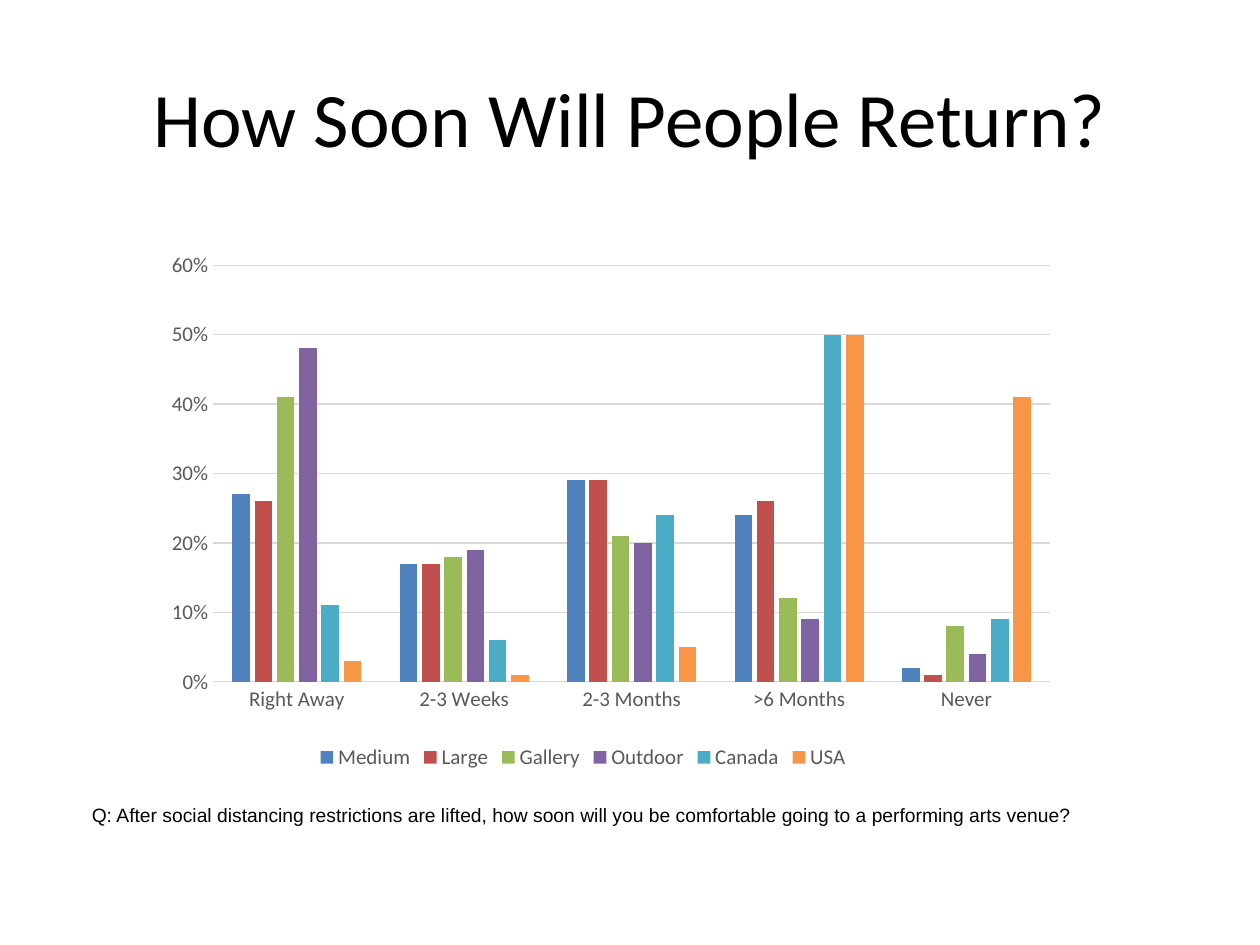
from dataclasses import dataclass

from lxml.etree import SubElement
from pptx import Presentation
from pptx.chart.data import CategoryChartData
from pptx.dml.color import RGBColor
from pptx.enum.chart import XL_CHART_TYPE as ChartType
from pptx.enum.chart import XL_LEGEND_POSITION as LegendPosition
from pptx.enum.chart import XL_TICK_MARK as TickMark
from pptx.enum.text import MSO_ANCHOR as Anchor
from pptx.enum.text import PP_ALIGN as Align
from pptx.oxml.ns import qn
from pptx.util import Inches, Pt

TITLE = "How Soon Will People Return?"
QUESTION = ("Q: After social distancing restrictions are lifted, how soon will you "
            "be comfortable going to a performing arts venue?")
TIMINGS = ["Right Away", "2-3 Weeks", "2-3 Months", ">6 Months", "Never"]
AUDIENCES = [
    ("Medium", "4F81BD", (0.27, 0.17, 0.29, 0.24, 0.02)),
    ("Large", "C0504D", (0.26, 0.17, 0.29, 0.26, 0.01)),
    ("Gallery", "9BBB59", (0.41, 0.18, 0.21, 0.12, 0.08)),
    ("Outdoor", "8064A2", (0.48, 0.19, 0.2, 0.09, 0.04)),
    ("Canada", "4BACC6", (0.11, 0.06, 0.24, 0.5, 0.09)),
    ("USA", "F79646", (0.03, 0.01, 0.05, 0.5, 0.41)),
]

SLIDE_SIZE = Inches(10), Inches(7.5)
TITLE_BOX = 0.05, 0.04, 0.9, 1 / 6
CHART_BOX = 0.092, 0.181, 0.742, 0.639
QUESTION_BOX = 0.063, 0.843, 0.845, 0.039
PLOT_SHARES = {"x": 0.104, "y": 0.156, "w": 0.896, "h": 0.69}


@dataclass(frozen=True)
class Theme:
    ink: str = "000000"
    label: str = "595959"
    rule: str = "D9D9D9"
    heading_font: str = "Calibri"
    note_font: str = "Arial"
    title_size: int = 44
    label_size: int = 12
    note_size: int = 11
    rule_width: float = 0.75


THEME = Theme()
LABEL_STYLE = THEME.heading_font, THEME.label_size, THEME.label


def place(box):
    return [round(share * side) for share, side in zip(box, SLIDE_SIZE * 2)]


def set_all(target, values):
    for name, value in values.items():
        setattr(target, name, value)


def style_font(font, name, size, color):
    set_all(font, {"name": name, "size": Pt(size), "bold": False})
    font.color.rgb = RGBColor.from_string(color)


def style_rule(line):
    line.color.rgb = RGBColor.from_string(THEME.rule)
    line.width = Pt(THEME.rule_width)


def set_plot_layout(chart):
    plot_area = chart.element.find(".//" + qn("c:plotArea"))
    layout = plot_area.find(qn("c:layout"))
    if layout is None:
        layout = plot_area.makeelement(qn("c:layout"))
        plot_area.insert(0, layout)
    manual = SubElement(layout, qn("c:manualLayout"))
    settings = {"layoutTarget": "inner", "xMode": "edge", "yMode": "edge", **PLOT_SHARES}
    for tag, value in settings.items():
        SubElement(manual, qn("c:" + tag)).set("val", str(value))


def add_title(slide):
    title = slide.shapes.title
    set_all(title, dict(zip(("left", "top", "width", "height"), place(TITLE_BOX))))
    title.text_frame.text = TITLE
    title.text_frame.vertical_anchor = Anchor.MIDDLE
    paragraph = title.text_frame.paragraphs[0]
    paragraph.alignment = Align.CENTER
    style_font(paragraph.runs[0].font, THEME.heading_font, THEME.title_size, THEME.ink)


def add_question(slide):
    frame = slide.shapes.add_textbox(*place(QUESTION_BOX)).text_frame
    frame.word_wrap = True
    frame.text = QUESTION
    style_font(frame.paragraphs[0].runs[0].font, THEME.note_font, THEME.note_size, THEME.ink)


def add_return_chart(slide):
    data = CategoryChartData(number_format="0%")
    data.categories = TIMINGS
    for name, _, shares in AUDIENCES:
        data.add_series(name, shares)
    chart = slide.shapes.add_chart(
        ChartType.COLUMN_CLUSTERED, *place(CHART_BOX), data).chart
    set_all(chart, {"has_title": False, "has_legend": True})
    style_font(chart.font, *LABEL_STYLE)
    set_all(chart.legend, {"position": LegendPosition.BOTTOM, "include_in_layout": False})
    style_font(chart.legend.font, *LABEL_STYLE)

    plot = chart.plots[0]
    set_all(plot, {"gap_width": 219, "overlap": -27, "vary_by_categories": False})
    for series, (_, color, _) in zip(plot.series, AUDIENCES):
        series.format.fill.solid()
        series.format.fill.fore_color.rgb = RGBColor.from_string(color)

    for axis in (chart.category_axis, chart.value_axis):
        set_all(axis, {"major_tick_mark": TickMark.NONE, "minor_tick_mark": TickMark.NONE})
        style_font(axis.tick_labels.font, *LABEL_STYLE)
    style_rule(chart.category_axis.format.line)

    value_axis = chart.value_axis
    set_all(value_axis, {"minimum_scale": 0, "maximum_scale": 0.6, "major_unit": 0.1})
    set_all(value_axis.tick_labels, {"number_format": "0%", "number_format_is_linked": False})
    value_axis.format.line.fill.background()
    style_rule(value_axis.major_gridlines.format.line)
    set_plot_layout(chart)


def main():
    presentation = Presentation()
    presentation.slide_width, presentation.slide_height = SLIDE_SIZE
    slide = presentation.slides.add_slide(presentation.slide_layouts.get_by_name("Title Only"))
    add_title(slide)
    add_question(slide)
    add_return_chart(slide)
    presentation.save("out.pptx")


if __name__ == "__main__":
    main()
